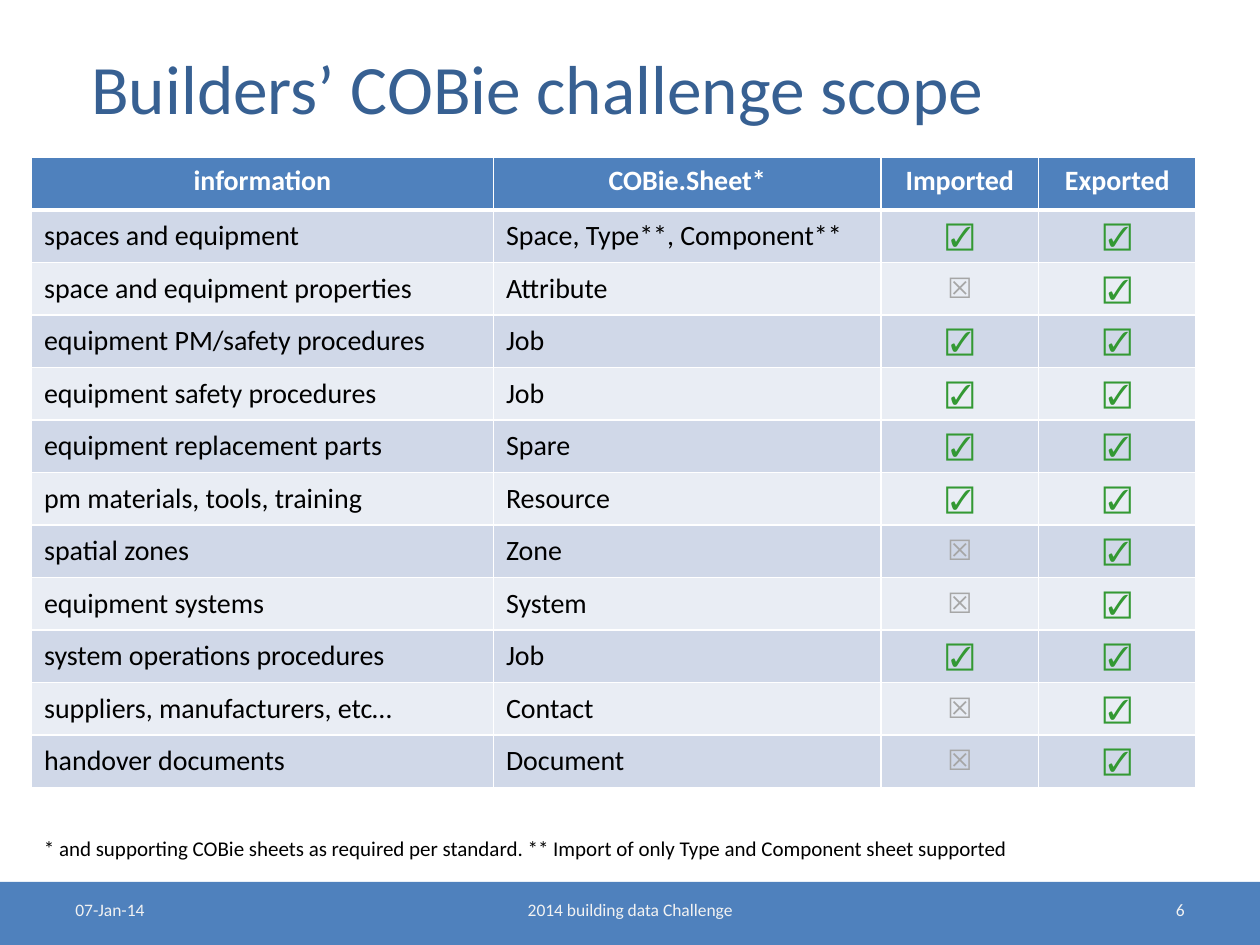
from typing import NamedTuple

from lxml.etree import SubElement
from pptx import Presentation
from pptx.dml.color import RGBColor
from pptx.enum.shapes import MSO_SHAPE as Shape
from pptx.enum.text import MSO_ANCHOR as Anchor, PP_ALIGN as Align
from pptx.oxml.ns import qn
from pptx.util import Pt

FONT = "Calibri"
WHITE = RGBColor(0xFF, 0xFF, 0xFF)
BLACK = RGBColor(0x00, 0x00, 0x00)
BLUE = RGBColor(0x4F, 0x81, 0xBD)
TITLE_BLUE = RGBColor(0x37, 0x60, 0x92)
BAND_DARK = RGBColor(0xD0, 0xD8, 0xE8)
BAND_LIGHT = RGBColor(0xE9, 0xED, 0xF4)
GREEN = RGBColor(0x33, 0x99, 0x33)
GREY = RGBColor(0xA6, 0xA6, 0xA6)
FOOTER_GREY = RGBColor(0xF2, 0xF2, 0xF2)

COLUMN_WIDTHS = (264, 221.5, 90, 90)
ROW_HEIGHT = 30
HEADER_RULE = 3
CELL_RULE = 1
HEADINGS = ("information", "COBie.Sheet*", "Imported", "Exported")


class ScopeRow(NamedTuple):
    information: str
    sheet: str
    imported: bool
    exported: bool = True


class Label(NamedTuple):
    text: str
    left: float
    top: float
    width: float
    height: float
    size: float
    color: RGBColor
    align: Align = Align.LEFT
    anchor: Anchor = Anchor.TOP
    margin_left: float = 7.2


SCOPE = (
    ScopeRow("spaces and equipment", "Space, Type**, Component**", True),
    ScopeRow("space and equipment properties", "Attribute", False),
    ScopeRow("equipment PM/safety procedures", "Job", True),
    ScopeRow("equipment safety procedures", "Job", True),
    ScopeRow("equipment replacement parts", "Spare", True),
    ScopeRow("pm materials, tools, training", "Resource", True),
    ScopeRow("spatial zones", "Zone", False),
    ScopeRow("equipment systems", "System", False),
    ScopeRow("system operations procedures", "Job", True),
    ScopeRow("suppliers, manufacturers, etc…", "Contact", False),
    ScopeRow("handover documents", "Document", False),
)

TITLE = Label("Builders’ COBie challenge scope", 36, 21.5, 648, 56, 39.6,
              TITLE_BLUE, anchor=Anchor.MIDDLE, margin_left=16.2)
FOOTNOTE = Label("* and supporting COBie sheets as required per standard. "
                 "** Import of only Type and Component sheet supported",
                 18, 474, 678, 21.8, 12, BLACK)
FOOTER = (
    Label("2014 building data Challenge", 246, 510, 228, 19.5, 10, FOOTER_GREY, Align.CENTER),
    Label("6", 516, 510, 168, 19.5, 10, FOOTER_GREY, Align.RIGHT),
    Label("07-Jan-14", 36, 510, 168, 19.5, 10, FOOTER_GREY),
)


def format_text(text_frame, text: str, size: float, color: RGBColor,
                align: Align, bold: bool = False) -> None:
    text_frame.text = text
    paragraph = text_frame.paragraphs[0]
    paragraph.alignment = align
    font = paragraph.runs[0].font
    font.name, font.size, font.bold = FONT, Pt(size), bold
    font.color.rgb = color


def add_label(shapes, label: Label) -> None:
    box = shapes.add_textbox(Pt(label.left), Pt(label.top), Pt(label.width), Pt(label.height))
    text_frame = box.text_frame
    text_frame.word_wrap = True
    text_frame.vertical_anchor = label.anchor
    text_frame.margin_left = Pt(label.margin_left)
    format_text(text_frame, label.text, label.size, label.color, label.align)


def set_borders(cell, top: float, bottom: float) -> None:
    properties = cell._tc.get_or_add_tcPr()
    sides = {"a:lnL": CELL_RULE, "a:lnR": CELL_RULE, "a:lnT": top, "a:lnB": bottom}
    for tag, width in sides.items():
        line = SubElement(properties, qn(tag), w=str(Pt(width)))
        fill = SubElement(line, qn("a:solidFill"))
        SubElement(fill, qn("a:srgbClr"), val=str(WHITE))


def fill_cell(cell, text: str, color: RGBColor, fill: RGBColor, align: Align,
              bold: bool, anchor: Anchor, top: float, bottom: float) -> None:
    set_borders(cell, top, bottom)
    cell.fill.solid()
    cell.fill.fore_color.rgb = fill
    cell.vertical_anchor = anchor
    format_text(cell.text_frame, text, 16, color, align, bold)


def add_scope_table(shapes) -> None:
    row_count = len(SCOPE) + 1
    table = shapes.add_table(row_count, len(COLUMN_WIDTHS), Pt(18), Pt(90),
                             Pt(sum(COLUMN_WIDTHS)), Pt(ROW_HEIGHT * row_count)).table
    table.horz_banding = False
    for column, width in zip(table.columns, COLUMN_WIDTHS):
        column.width = Pt(width)
    for row in table.rows:
        row.height = Pt(ROW_HEIGHT)

    # Header row
    for index, heading in enumerate(HEADINGS):
        fill_cell(table.cell(0, index), heading, WHITE, BLUE, Align.CENTER, True,
                  Anchor.TOP, CELL_RULE, HEADER_RULE)

    # Body rows: two text columns, then two check marks
    for number, entry in enumerate(SCOPE, start=1):
        band = BAND_DARK if number % 2 else BAND_LIGHT
        top = HEADER_RULE if number == 1 else CELL_RULE
        for index, value in enumerate(entry):
            is_mark = isinstance(value, bool)
            if is_mark:
                text, color = ("☑", GREEN) if value else ("☒", GREY)
            else:
                text, color = value, BLACK
            fill_cell(table.cell(number, index), text, color, band,
                      Align.CENTER if is_mark else Align.LEFT, is_mark,
                      Anchor.MIDDLE, top, CELL_RULE)


def add_footer(shapes) -> None:
    footer = shapes.add_group_shape().shapes
    bar = footer.add_shape(Shape.RECTANGLE, Pt(0), Pt(504), Pt(720), Pt(36))
    bar.shadow.inherit = False
    bar.fill.solid()
    bar.fill.fore_color.rgb = BLUE
    bar.line.fill.background()
    for label in FOOTER:
        add_label(footer, label)


def main() -> None:
    presentation = Presentation()
    presentation.slide_width, presentation.slide_height = Pt(720), Pt(540)
    slide = presentation.slides.add_slide(presentation.slide_layouts[6])

    add_scope_table(slide.shapes)
    add_label(slide.shapes, FOOTNOTE)
    add_label(slide.shapes, TITLE)
    add_footer(slide.shapes)

    presentation.save("out.pptx")


if __name__ == "__main__":
    main()
